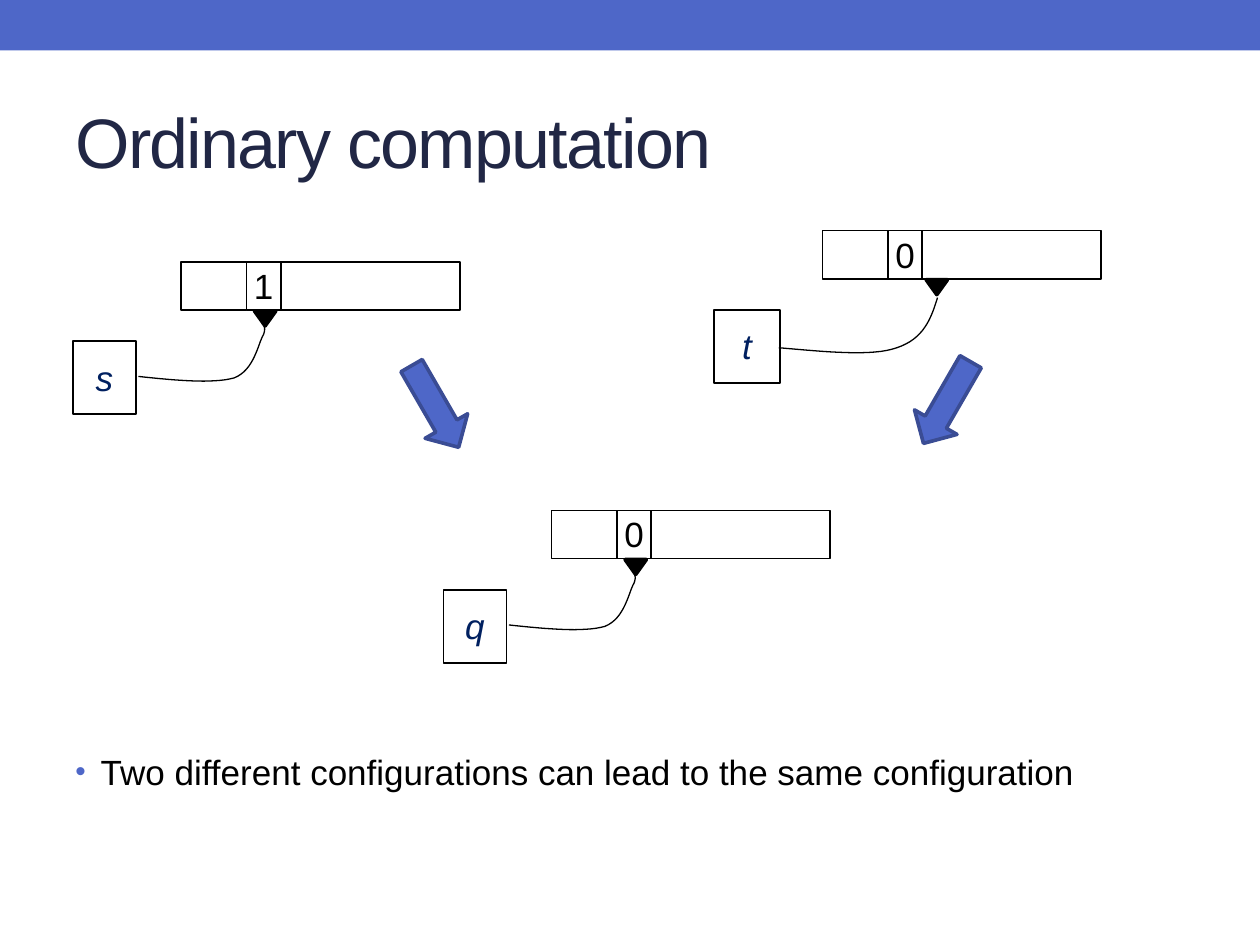
from dataclasses import dataclass

from lxml import etree
from pptx import Presentation
from pptx.dml.color import RGBColor
from pptx.enum.shapes import MSO_SHAPE
from pptx.enum.text import MSO_ANCHOR, PP_ALIGN
from pptx.oxml.ns import qn
from pptx.util import Cm, Pt

RECTANGLE = MSO_SHAPE.RECTANGLE
TRIANGLE = MSO_SHAPE.ISOSCELES_TRIANGLE
RIGHT_ARROW = MSO_SHAPE.RIGHT_ARROW
TOP, MIDDLE = MSO_ANCHOR.TOP, MSO_ANCHOR.MIDDLE
LEFT, CENTER = PP_ALIGN.LEFT, PP_ALIGN.CENTER
TITLE_ONLY = 5


@dataclass(frozen=True)
class Theme:
    font: str = "Arial"
    accent: str = "4E67C8"
    accent_dark: str = "3A4C94"
    title: str = "212745"
    state: str = "002060"
    ink: str = "000000"
    title_size: int = 40
    text_size: int = 20
    outline: float = 1
    wire: float = 0.75
    heavy: float = 2.08


THEME = Theme()

# Lengths below are centimetres, measured from the corner of a machine's box.
TAPE_LEFT, TAPE_HEIGHT = 2.18, 0.97
CELL_WIDTHS = (1.32, 0.69, 3.61)
STATE_TOP, STATE_HEIGHT = 1.6, 1.47
HEAD_TOP, HEAD_WIDTH, HEAD_HEIGHT = 0.99, 0.43, 0.3

# Each wire is a start point followed by three points per Bezier curve.
WIRE_UNDER_CELL = [
    (1.32, 2.31), (2.06, 2.39), (2.82, 2.46), (3.25, 2.34), (3.66, 2.18),
    (3.73, 1.65), (3.84, 1.47), (3.91, 1.3), (3.81, 1.24), (3.81, 1.24)]
WIRE_PAST_CELL = [
    (1.3, 2.36), (2.24, 2.44), (3.18, 2.54), (3.68, 2.36), (4.22, 2.18),
    (4.37, 1.78), (4.5, 1.35)]

# left, top, state, symbol, state width, head left, wire
MACHINES = [
    (1.47, 5.28, "s", "1", 1.27, 3.66, WIRE_UNDER_CELL),
    (8.94, 10.29, "q", "0", 1.27, 3.66, WIRE_UNDER_CELL),
    (14.4, 4.65, "t", "0", 1.32, 4.27, WIRE_PAST_CELL),
]
# left, top, rotation
ARROWS = [(7.82, 7.7, 60), (18.14, 7.62, 120)]


def set_attributes(target, values):
    for name, value in values.items():
        setattr(target, name, value)


def paint(shape, fill=None, line=None, width=THEME.outline):
    shape.shadow.inherit = False
    if fill:
        shape.fill.solid()
        shape.fill.fore_color.rgb = RGBColor.from_string(fill)
    else:
        shape.fill.background()
    if line:
        shape.line.color.rgb = RGBColor.from_string(line)
        shape.line.width = Pt(width)
    else:
        shape.line.fill.background()


def add_box(slide, kind, box, rotation=0, **paint_values):
    shape = slide.shapes.add_shape(kind, *map(Cm, box))
    shape.rotation = rotation
    paint(shape, **paint_values)
    return shape


def write(shape, text, color, size=THEME.text_size, italic=False,
          alignment=LEFT, anchor=TOP, margins=(0.25, 0.13)):
    """Put one formatted line in the shape and return its paragraph."""
    frame = shape.text_frame
    side, end = map(Cm, margins)
    set_attributes(frame, {
        "word_wrap": True, "vertical_anchor": anchor,
        "margin_left": side, "margin_right": side,
        "margin_top": end, "margin_bottom": end})
    paragraph = frame.paragraphs[0]
    paragraph.alignment = alignment
    run = paragraph.add_run()
    run.text = text
    set_attributes(run.font, {
        "name": THEME.font, "size": Pt(size), "italic": italic})
    run.font.color.rgb = RGBColor.from_string(color)
    return paragraph


def add_title(slide, box, text):
    title = slide.shapes.title
    set_attributes(title, dict(zip(("left", "top", "width", "height"),
                                   map(Cm, box))))
    paragraph = write(title, text, THEME.title, THEME.title_size,
                      anchor=MIDDLE)
    paragraph.runs[0].font._element.set("spc", "-100")


def add_bullet(slide, box, text):
    paragraph = write(slide.shapes.add_textbox(*map(Cm, box)), text,
                      THEME.ink)
    paragraph.space_before = Pt(6)
    properties = paragraph._p.get_or_add_pPr()
    properties.set("marL", str(Cm(0.51)))
    properties.set("indent", str(Cm(-0.51)))
    color = etree.SubElement(properties, qn("a:buClr"))
    etree.SubElement(color, qn("a:srgbClr"), val=THEME.accent)
    etree.SubElement(properties, qn("a:buSzPct"), val="85000")
    etree.SubElement(properties, qn("a:buFont"), typeface=THEME.font)
    etree.SubElement(properties, qn("a:buChar"), char="•")


def bezier_points(points, steps=16):
    """Yield points along the joined cubic curves, after the start point."""
    for first in range(0, len(points) - 1, 3):
        controls = points[first:first + 4]
        for step in range(1, steps + 1):
            t = step / steps
            weights = ((1 - t) ** 3, 3 * t * (1 - t) ** 2,
                       3 * t ** 2 * (1 - t), t ** 3)
            yield tuple(sum(weight * value
                            for weight, value in zip(weights, axis))
                        for axis in zip(*controls))


def add_wire(slide, left, top, points):
    def place(point):
        return Cm(left + point[0]), Cm(top + point[1])

    builder = slide.shapes.build_freeform(*place(points[0]))
    builder.add_line_segments(map(place, bezier_points(points)), close=False)
    paint(builder.convert_to_shape(), line=THEME.ink, width=THEME.wire)


def add_machine(slide, left, top, state, symbol, state_width, head_left,
                wire):
    """Draw a tape, its control state, and the head wired to the state."""
    cell_left = left + TAPE_LEFT
    for width, text in zip(CELL_WIDTHS, ("", symbol, "")):
        cell = add_box(slide, RECTANGLE, (cell_left, top, width, TAPE_HEIGHT),
                       line=THEME.ink)
        if text:
            write(cell, text, THEME.ink, alignment=CENTER, margins=(0, 0.05))
        cell_left += width

    state_box = add_box(
        slide, RECTANGLE, (left, top + STATE_TOP, state_width, STATE_HEIGHT),
        line=THEME.ink)
    write(state_box, state, THEME.state, italic=True, alignment=CENTER,
          margins=(0.3, 0.3))
    add_box(slide, TRIANGLE,
            (left + head_left, top + HEAD_TOP, HEAD_WIDTH, HEAD_HEIGHT),
            rotation=180, fill=THEME.ink, line=THEME.ink, width=THEME.heavy)
    add_wire(slide, left, top, wire)


def main():
    presentation = Presentation()
    set_attributes(presentation, {"slide_width": Cm(25.4),
                                  "slide_height": Cm(19.05)})
    slide = presentation.slides.add_slide(
        presentation.slide_layouts[TITLE_ONLY])

    add_box(slide, RECTANGLE, (0, 0, 25.4, 1.02), fill=THEME.accent)
    add_title(slide, (1.27, 1.47, 22.86, 2.74), "Ordinary computation")
    add_bullet(slide, (1.27, 14.99, 22.86, 3),
               "Two different configurations can lead to the same "
               "configuration")
    for machine in MACHINES:
        add_machine(slide, *machine)
    for left, top, rotation in ARROWS:
        add_box(slide, RIGHT_ARROW, (left, top, 1.9, 0.99), rotation,
                fill=THEME.accent, line=THEME.accent_dark, width=THEME.heavy)
    presentation.save("out.pptx")


if __name__ == "__main__":
    main()
